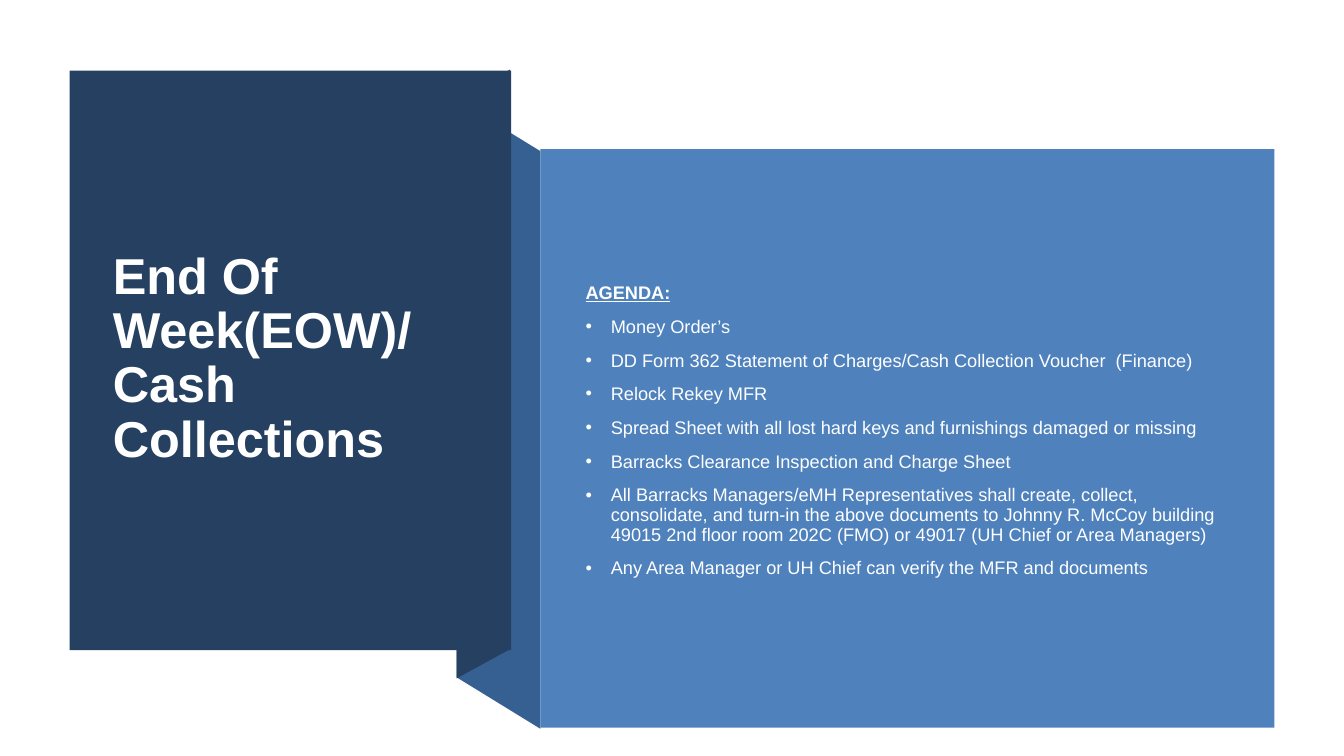
from dataclasses import dataclass

from pptx import Presentation
from pptx.dml.color import RGBColor
from pptx.enum import shapes, text
from pptx.oxml import parse_xml
from pptx.oxml.ns import nsdecls
from pptx.shapes.base import BaseShape
from pptx.slide import Slide
from pptx.text.text import TextFrame, _Paragraph as Paragraph
from pptx.util import Inches, Pt

NAVY = RGBColor(0x25, 0x40, 0x61)
STEEL = RGBColor(0x37, 0x60, 0x92)
BLUE = RGBColor(0x4F, 0x81, 0xBD)
WHITE = RGBColor(0xFF, 0xFF, 0xFF)
OFF_WHITE = RGBColor(0xFE, 0xFF, 0xFF)

FONT = "Arial"
TITLE = "End Of Week(EOW)/ Cash Collections"
AGENDA_HEADING = "AGENDA:"
AGENDA_ITEMS = [
    "Money Order’s",
    "DD Form 362 Statement of Charges/Cash Collection Voucher  (Finance)",
    "Relock Rekey MFR",
    "Spread Sheet with all lost hard keys and furnishings damaged or missing",
    "Barracks Clearance Inspection and Charge Sheet",
    "All Barracks Managers/eMH Representatives shall create, collect, consolidate, "
    "and turn-in the above documents to Johnny R. McCoy building 49015 2nd floor "
    "room 202C (FMO) or 49017 (UH Chief or Area Managers)",
    "Any Area Manager or UH Chief can verify the MFR and documents",
]


@dataclass(frozen=True)
class Fold:
    """A side of the folded ribbon, as corner points in inches."""
    corners: tuple[tuple[float, float], ...]
    color: RGBColor


@dataclass(frozen=True)
class Panel:
    left: float
    top: float
    width: float
    height: float
    color: RGBColor


FOLDS = [
    Fold(((5.36, 7.23), (4.53, 6.72), (4.53, 0.99), (5.36, 1.5)), STEEL),
    Fold(((5.06, 6.44), (4.53, 6.73), (4.53, 0.98), (5.06, 0.69)), NAVY),
]
PANELS = [
    Panel(0.69, 0.7, 4.38, 5.75, NAVY),
    Panel(5.36, 1.48, 7.28, 5.74, BLUE),
]


def paint(shape: BaseShape, color: RGBColor) -> None:
    shape.shadow.inherit = False
    shape.fill.solid()
    shape.fill.fore_color.rgb = color
    shape.line.fill.background()


def draw_fold(slide: Slide, fold: Fold) -> None:
    start, *others = [(Inches(x), Inches(y)) for x, y in fold.corners]
    builder = slide.shapes.build_freeform(*start)
    builder.add_line_segments(others, close=True)
    paint(builder.convert_to_shape(), fold.color)


def draw_panel(slide: Slide, panel: Panel) -> None:
    shape = slide.shapes.add_shape(
        shapes.MSO_SHAPE.RECTANGLE, Inches(panel.left), Inches(panel.top),
        Inches(panel.width), Inches(panel.height))
    paint(shape, panel.color)


def add_text_frame(slide: Slide, left: float, top: float,
                   width: float, height: float) -> TextFrame:
    box = slide.shapes.add_textbox(
        Inches(left), Inches(top), Inches(width), Inches(height))
    frame = box.text_frame
    frame.word_wrap = True
    frame.vertical_anchor = text.MSO_ANCHOR.MIDDLE
    return frame


def format_paragraph(paragraph: Paragraph, size: int, color: RGBColor,
                     bold: bool = False, underline: bool = False) -> None:
    paragraph.line_spacing = 0.9
    for run in paragraph.runs:
        run.font.name = FONT
        run.font.size = Pt(size)
        run.font.bold = bold
        run.font.underline = underline
        run.font.color.rgb = color


def add_bullet(paragraph: Paragraph) -> None:
    properties = paragraph._p.get_or_add_pPr()
    properties.set("marL", str(Inches(0.25)))
    properties.set("indent", str(-Inches(0.25)))
    properties.append(parse_xml(f'<a:buFont {nsdecls("a")} typeface="{FONT}"/>'))
    properties.append(parse_xml(f'<a:buChar {nsdecls("a")} char="•"/>'))


def write_title(slide: Slide) -> None:
    frame = add_text_frame(slide, 1.02, 1.07, 3.71, 4.99)
    frame.text = TITLE
    format_paragraph(frame.paragraphs[0], 36, WHITE, bold=True)


def write_agenda(slide: Slide) -> None:
    frame = add_text_frame(slide, 5.71, 1.88, 6.51, 5.13)
    frame.margin_bottom = Inches(0.38)  # lifts the list above the middle
    frame.text = "\n".join([AGENDA_HEADING, *AGENDA_ITEMS])
    for index, paragraph in enumerate(frame.paragraphs):
        is_heading = index == 0
        format_paragraph(paragraph, 13, OFF_WHITE, is_heading, is_heading)
        paragraph.space_before = Pt(10)
        if not is_heading:
            add_bullet(paragraph)


def main() -> None:
    presentation = Presentation()
    presentation.slide_width = Inches(13.33)
    presentation.slide_height = Inches(7.5)
    slide = presentation.slides.add_slide(presentation.slide_layouts[6])
    for fold in FOLDS:
        draw_fold(slide, fold)
    for panel in PANELS:
        draw_panel(slide, panel)
    write_title(slide)
    write_agenda(slide)
    presentation.save("out.pptx")


if __name__ == "__main__":
    main()
